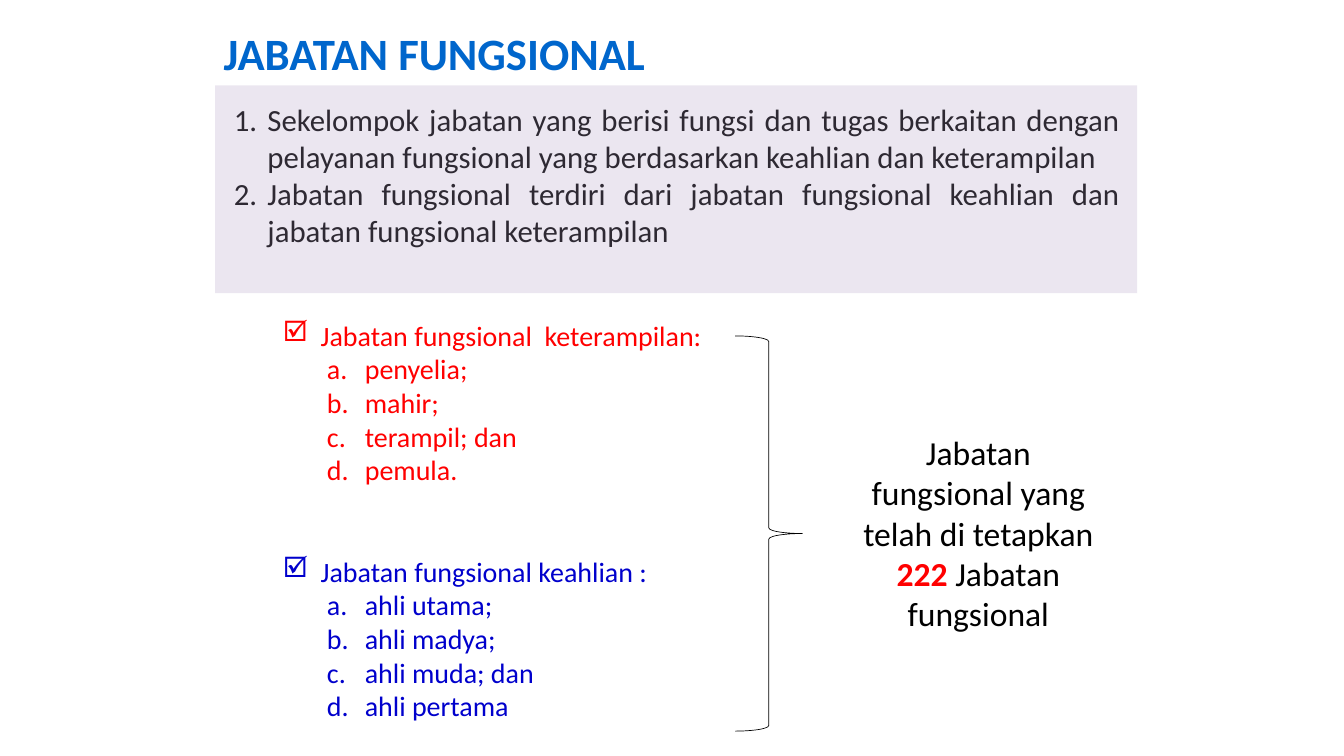
from lxml import etree
from pptx import Presentation
from pptx.dml.color import RGBColor
from pptx.enum.shapes import MSO_SHAPE
from pptx.enum.text import MSO_ANCHOR, MSO_AUTO_SIZE, PP_ALIGN
from pptx.oxml.ns import qn
from pptx.util import Cm, Pt

RECT, BRACE = MSO_SHAPE.RECTANGLE, MSO_SHAPE.RIGHT_BRACE
LEFT, CENTER, JUSTIFY = PP_ALIGN.LEFT, PP_ALIGN.CENTER, PP_ALIGN.JUSTIFY
TOP = MSO_ANCHOR.TOP
GROW = MSO_AUTO_SIZE.SHAPE_TO_FIT_TEXT

FONT = "Calibri"
COLORS = {
    "title": "0066CC",
    "skill": "FF0000",
    "expert": "0000CC",
    "text": "000000",
    "panel": "B3A2C7",
}
CHECK = ("buChar", "char", "☑")
LETTER = ("buAutoNum", "type", "alphaLcPeriod")
NUMBER = ("buAutoNum", "type", "arabicPeriod")

DEFINITIONS = [
    "Sekelompok jabatan yang berisi fungsi dan tugas berkaitan dengan "
    "pelayanan fungsional yang berdasarkan keahlian dan keterampilan",
    "Jabatan fungsional terdiri dari jabatan fungsional keahlian dan "
    "jabatan fungsional keterampilan",
]
GROUPS = [
    (11.91, "skill", "Jabatan fungsional  keterampilan:",
     ["penyelia;", "mahir;", "terampil; dan", "pemula."]),
    (20.83, "expert", "Jabatan fungsional keahlian :",
     ["ahli utama;", "ahli madya;", "ahli muda; dan", "ahli pertama"]),
]


def color(name):
    return RGBColor.from_string(COLORS[name])


def place(sp, left, top, width, height):
    sp.left, sp.top, sp.width, sp.height = map(Cm, (left, top, width, height))


def add_run(p, text, size, color_name, bold=False):
    r = p.add_run()
    r.text = text
    r.font.name = FONT
    r.font.size = Pt(size)
    r.font.bold = bold
    r.font.color.rgb = color(color_name)


def set_bullet(p, bullet, indent, hang):
    tag, attr, value = bullet
    pPr = p._p.get_or_add_pPr()
    pPr.set("marL", str(Cm(indent)))
    pPr.set("indent", str(-Cm(hang)))
    etree.SubElement(pPr, qn(f"a:{tag}")).set(attr, value)


def add_text_box(s, box, paragraphs, align=LEFT):
    """Each paragraph is (runs, bullet arguments or None)."""
    tf = s.shapes.add_textbox(*map(Cm, box)).text_frame
    tf.word_wrap = True
    tf.auto_size = GROW
    for i, (runs, bullet) in enumerate(paragraphs):
        p = tf.add_paragraph() if i else tf.paragraphs[0]
        p.alignment = align
        if bullet:
            set_bullet(p, *bullet)
        for run in runs:
            add_run(p, *run)


def add_title(s, text):
    sp = s.shapes.title
    place(sp, 8.2, 0.86, 19.35, 2.31)
    tf = sp.text_frame
    tf.word_wrap = True
    tf.auto_size = GROW
    tf.vertical_anchor = TOP
    p = tf.paragraphs[0]
    p.alignment = LEFT
    add_run(p, text, 48, "title", True)


def add_definitions(s):
    add_text_box(s, (8.59, 3.68, 33.99, 5.89),
                 [([(text, 33, "text")], (NUMBER, 1.27, 1.27))
                  for text in DEFINITIONS], JUSTIFY)


def add_group(s, top, color_name, heading, levels):
    paragraphs = [([(heading, 30, color_name)], (CHECK, 1.43, 1.43))]
    paragraphs += [([(level, 30, color_name)], (LETTER, 3.1, 1.43))
                   for level in levels]
    add_text_box(s, (10.44, top, 17.9, 6.68), paragraphs)


def add_brace(s):
    sp = s.shapes.add_shape(BRACE, Cm(27.79), Cm(12.7), Cm(2.54), Cm(14.94))
    sp.shadow.inherit = False
    sp.fill.background()
    sp.line.color.rgb = color("text")
    sp.line.width = Pt(0.75)


def add_panel(s):
    """Translucent panel laid over the definitions."""
    sp = s.shapes.add_shape(RECT, Cm(8.13), Cm(3.23), Cm(34.85), Cm(7.85))
    sp.shadow.inherit = False
    sp.fill.solid()
    sp.fill.fore_color.rgb = color("panel")
    sp.line.fill.background()
    clr = sp.fill._xPr.find(f".//{qn('a:srgbClr')}")
    etree.SubElement(clr, qn("a:alpha")).set("val", "26000")


def main():
    prs = Presentation()
    prs.slide_width, prs.slide_height = Cm(50.8), Cm(28.58)
    s = prs.slides.add_slide(prs.slide_layouts[5])
    add_title(s, "JABATAN FUNGSIONAL")
    for group in GROUPS:
        add_group(s, *group)
    add_definitions(s)
    add_brace(s)
    summary = [("Jabatan fungsional yang telah di tetapkan ", 36, "text"),
               ("222 ", 36, "skill", True),
               ("Jabatan fungsional", 36, "text")]
    add_text_box(s, (32.05, 16.2, 9.86, 7.95), [(summary, None)], CENTER)
    add_panel(s)
    prs.save("out.pptx")


if __name__ == "__main__":
    main()
